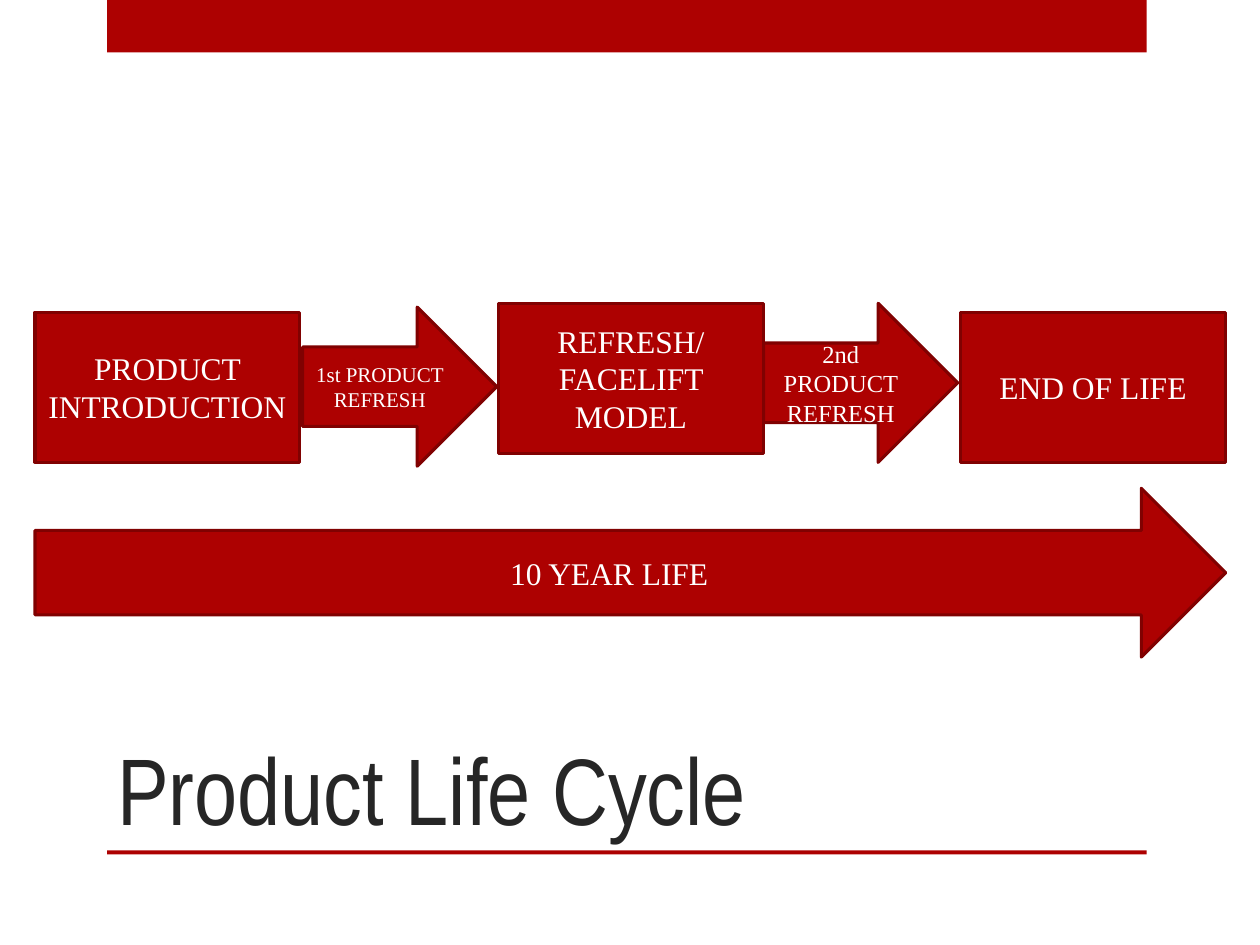
from dataclasses import dataclass

from pptx import Presentation
from pptx.dml.color import RGBColor
from pptx.enum.shapes import MSO_SHAPE as Shape
from pptx.enum.text import MSO_ANCHOR as Anchor, PP_ALIGN as Align
from pptx.slide import Slide
from pptx.util import Pt


def color(hex_code):
    return RGBColor.from_string(hex_code)


def write(frame, text, size, font, hex_code, align=Align.LEFT, anchor=Anchor.MIDDLE):
    frame.word_wrap = True
    frame.vertical_anchor = anchor
    paragraph = frame.paragraphs[0]
    paragraph.alignment = align
    run = paragraph.add_run()
    run.text = text
    run.font.size = Pt(size)
    run.font.name = font
    run.font.color.rgb = color(hex_code)


@dataclass
class LifeCycleSlide:
    slide: Slide
    red: str = "AD0101"
    outline: str = "800101"
    ink: str = "262626"
    light: str = "FFFFFF"
    title_font: str = "Arial Narrow"
    body_font: str = "Times New Roman"

    def band(self, left, top, width, height, kind=Shape.RECTANGLE):
        """Add a plain red shape without an outline."""
        band = self.slide.shapes.add_shape(kind, Pt(left), Pt(top), Pt(width), Pt(height))
        band.shadow.inherit = False
        band.fill.solid()
        band.fill.fore_color.rgb = color(self.red)
        band.line.fill.background()
        return band

    def step(self, kind, text, left, top, width, height, size=18):
        """Add an outlined, labelled shape of the process."""
        step = self.band(left, top, width, height, kind)
        step.line.color.rgb = color(self.outline)
        step.line.width = Pt(1.75)
        write(step.text_frame, text, size, self.body_font, self.light, align=Align.CENTER)

    def stage(self, text, left, top):
        self.step(Shape.RECTANGLE, text, left, top, 151.2, 85.7)

    def transition(self, text, left, top, size):
        self.step(Shape.RIGHT_ARROW, text, left, top, 110.9, 90.9, size)

    def title(self, text, left, top, width, height):
        title = self.slide.shapes.add_textbox(Pt(left), Pt(top), Pt(width), Pt(height))
        write(title.text_frame, text, 54, self.title_font, self.ink, anchor=Anchor.BOTTOM)


def main():
    deck = Presentation()
    deck.slide_width, deck.slide_height = Pt(720), Pt(540)
    page = LifeCycleSlide(deck.slides.add_slide(deck.slide_layouts[6]))

    for top, height in ((0, 30), (486, 2.2)):
        page.band(61.2, top, 594, height)
    page.title("Product Life Cycle", 60, 360, 534, 126)

    outer_top, middle_top = 178.4, 173.3
    page.stage("PRODUCT INTRODUCTION", 20, outer_top)
    page.transition("1st PRODUCT REFRESH", 173, 175.5, size=12)
    page.stage("REFRESH/FACELIFT MODEL", 285, middle_top)
    page.transition("2nd PRODUCT REFRESH", 436.4, middle_top, size=14)
    page.stage("END OF LIFE", 549, outer_top)
    page.step(Shape.RIGHT_ARROW, "10 YEAR LIFE", 20, 279, 680.4, 96.5)

    deck.save("out.pptx")


if __name__ == "__main__":
    main()
